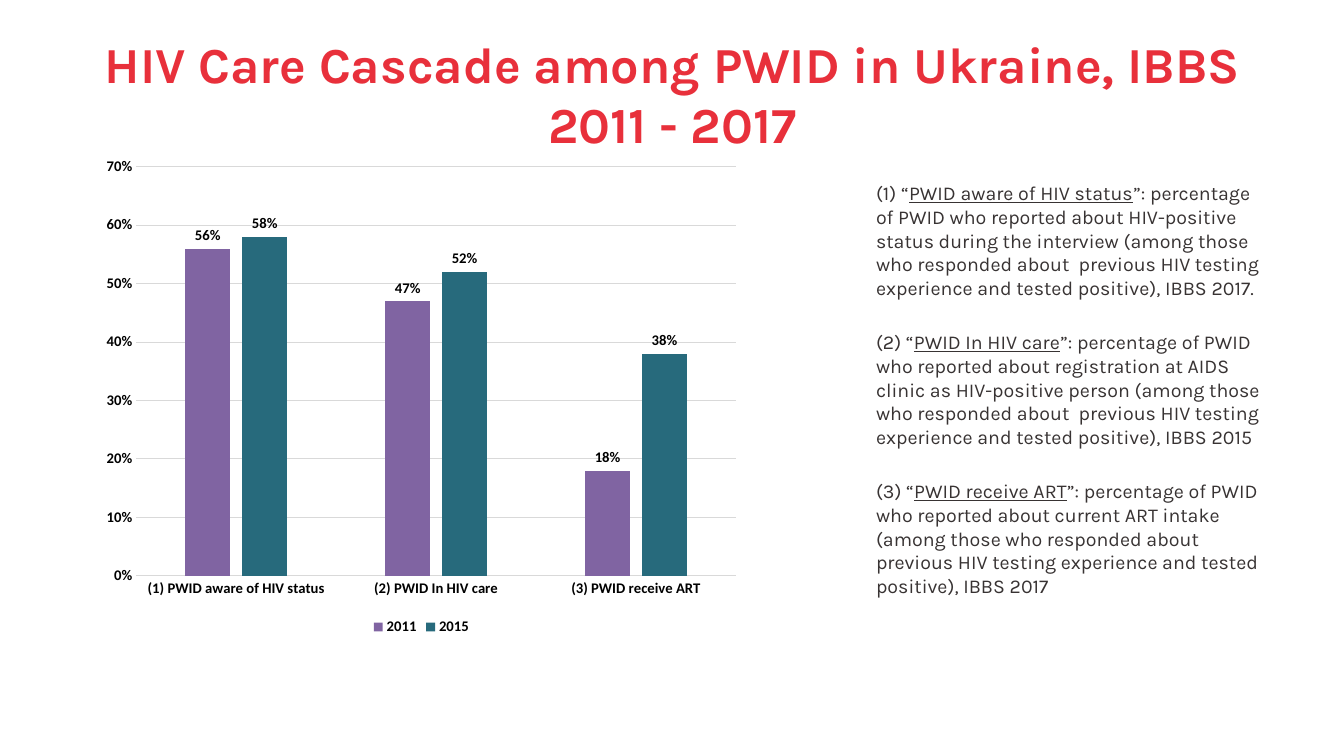
from dataclasses import dataclass

from lxml import etree
from pptx import Presentation
from pptx import util as u
from pptx.chart.data import CategoryChartData
from pptx.dml.color import RGBColor
from pptx.enum import chart as ch, text as tx
from pptx.oxml.ns import qn

RED, INK, BLACK, GRID = "E8303B", "383333", "000000", "D9D9D9"


@dataclass
class Note:
    mark: str
    term: str
    body: str


@dataclass
class Wave:
    year: str
    vals: tuple[float, ...]
    tint: str


TESTED = "(among those who responded about  previous HIV testing experience and tested positive), IBBS"
NOTES = [
    Note("(1)", "PWID aware of HIV status",
         f"percentage of PWID who reported about HIV-positive status during the interview {TESTED} 2017."),
    Note("(2)", "PWID In HIV care",
         f"percentage of PWID who reported about registration at AIDS clinic as HIV-positive person {TESTED} 2015"),
    Note("(3)", "PWID receive ART",
         f"percentage of PWID who reported about current ART intake {TESTED} 2017"),
]
WAVES = [
    Wave("2011", (0.56, 0.47, 0.18), "8064A2"),
    Wave("2015", (0.58, 0.52, 0.38), "276A7C"),
]


def color(code: str) -> RGBColor:
    return RGBColor.from_string(code)


def style(font, size: float, tint: str, face: str, bold: bool = False) -> None:
    font.size, font.bold, font.name = u.Pt(size), bold, face
    font.color.rgb = color(tint)


def write(slide, box, paras, *, size, tint, bold=False, gap=0.0,
          align=tx.PP_ALIGN.LEFT, anchor=tx.MSO_ANCHOR.TOP) -> None:
    """Each paragraph is a list of (words, underlined) pairs."""
    frame = slide.shapes.add_textbox(*map(u.Inches, box)).text_frame
    frame.word_wrap, frame.vertical_anchor = True, anchor
    for i, runs in enumerate(paras):
        para = frame.add_paragraph() if i else frame.paragraphs[0]
        para.alignment = align
        if i:
            para.space_before = u.Pt(gap)
        for words, under in runs:
            run = para.add_run()
            run.text = words
            style(run.font, size, tint, "Karla", bold)
            run.font.underline = under


def rule(line) -> None:
    line.color.rgb, line.width = color(GRID), u.Pt(0.75)


def place(chart, **edges: float) -> None:
    """Fix the inner plot area as fractions of the chart."""
    area = chart._chartSpace.chart.plotArea
    for old in area.findall(qn("c:layout")):
        area.remove(old)
    layout = etree.Element(qn("c:layout"))
    manual = etree.SubElement(layout, qn("c:manualLayout"))
    parts = {"layoutTarget": "inner", "xMode": "edge", "yMode": "edge", **edges}
    for tag, val in parts.items():
        etree.SubElement(manual, qn(f"c:{tag}")).set("val", str(val))
    area.insert(0, layout)


def plot(slide, box, waves: list[Wave], notes: list[Note]) -> None:
    data = CategoryChartData(number_format="0%")
    data.categories = [f"{n.mark} {n.term}" for n in notes]
    for wave in waves:
        data.add_series(wave.year, wave.vals)
    chart = slide.shapes.add_chart(
        ch.XL_CHART_TYPE.COLUMN_CLUSTERED, *map(u.Inches, box), data).chart
    chart.has_title = False
    style(chart.font, 10.5, BLACK, "Calibri", True)
    place(chart, x=0.065, y=0.04, w=0.915, h=0.83)

    # Axes
    cat, val = chart.category_axis, chart.value_axis
    for axis in (cat, val):
        axis.major_tick_mark = axis.minor_tick_mark = ch.XL_TICK_MARK.NONE
    rule(cat.format.line)
    rule(val.major_gridlines.format.line)
    val.format.line.fill.background()
    val.minimum_scale, val.maximum_scale, val.major_unit = 0, 0.7, 0.1
    val.tick_labels.number_format = "0%"
    val.tick_labels.number_format_is_linked = False

    # Legend
    chart.has_legend = True
    chart.legend.position = ch.XL_LEGEND_POSITION.BOTTOM
    chart.legend.include_in_layout = False

    # Columns and their labels
    bars = chart.plots[0]
    bars.gap_width, bars.overlap, bars.vary_by_categories = 219, -27, False
    for wave, series in zip(waves, bars.series):
        series.format.fill.solid()
        series.format.fill.fore_color.rgb = color(wave.tint)
        labels = series.data_labels
        labels.show_value = True
        labels.number_format, labels.number_format_is_linked = "0%", False
        labels.position = ch.XL_LABEL_POSITION.OUTSIDE_END
        style(labels.font, 10.5, BLACK, "Calibri", True)


def main() -> None:
    deck = Presentation()
    deck.slide_width, deck.slide_height = u.Inches(13.33), u.Inches(7.5)
    slide = deck.slides.add_slide(deck.slide_layouts[6])

    # Title
    write(slide, (0.67, 0.3, 12, 1.25),
          [[("HIV Care Cascade among PWID in Ukraine, IBBS 2011 - 2017", False)]],
          size=36, tint=RED, bold=True,
          align=tx.PP_ALIGN.CENTER, anchor=tx.MSO_ANCHOR.MIDDLE)

    # Chart
    plot(slide, (0.93, 1.46, 6.5, 4.89), WAVES, NOTES)

    # Definitions
    write(slide, (8.59, 1.75, 4.08, 4.61),
          [[(f"{n.mark} “", False), (n.term, True), (f"”: {n.body}", False)]
           for n in NOTES],
          size=14, tint=INK, gap=22.4)

    deck.save("out.pptx")


if __name__ == "__main__":
    main()
